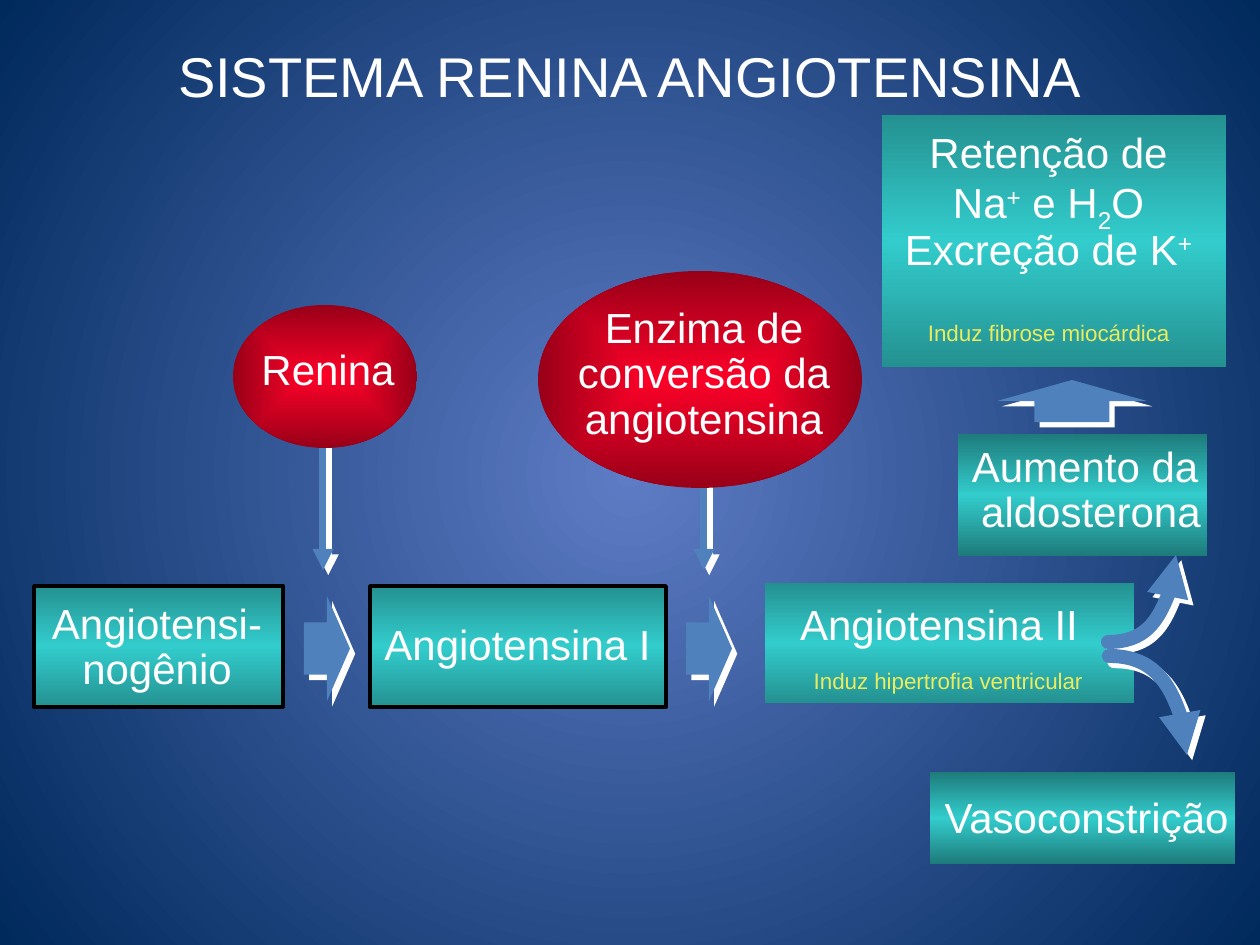
from dataclasses import dataclass
from typing import NamedTuple

from lxml import etree
from pptx import Presentation
from pptx.dml.color import RGBColor
from pptx.enum.shapes import MSO_CONNECTOR, MSO_SHAPE
from pptx.enum.text import MSO_ANCHOR, PP_ALIGN
from pptx.oxml import parse_xml
from pptx.oxml.ns import qn
from pptx.util import Emu, Pt

RECT, OVAL, ARROW = MSO_SHAPE.RECTANGLE, MSO_SHAPE.OVAL, MSO_SHAPE.RIGHT_ARROW
STRAIGHT = MSO_CONNECTOR.STRAIGHT
CENTER, MIDDLE = PP_ALIGN.CENTER, MSO_ANCHOR.MIDDLE

PX_PER_INCH = 126
FONT = "Arial"
COLORS = {
    "glow": "5E7CC5", "night": "00295C", "teal": "33CCCC", "red": "FC0128",
    "arrow": "4F81BD", "white": "FFFFFF", "black": "000000", "note": "EAEC5E",
}
SOFT, DEEP = 46275, 31373  # shade kept at gradient edges, in 1/1000 %
NS = 'xmlns:a="http://schemas.openxmlformats.org/drawingml/2006/main"'
LINEAR = '<a:lin ang="5400000" scaled="1"/>'


class Box(NamedTuple):
    left: int
    top: int
    width: int
    height: int


class Stop(NamedTuple):
    position: int
    color: str
    shade: int = 0


class Run(NamedTuple):
    text: str
    baseline: int = 0


@dataclass
class Panel:
    kind: MSO_SHAPE
    box: Box
    shade: int
    outlined: bool = False


@dataclass
class Line:
    runs: list[Run]
    size: int = 24
    color: str = "white"
    before: int = 0


@dataclass
class Label:
    box: Box
    lines: list[Line]
    wrap: bool = False
    spacing: float = 0.9
    middle: bool = False


@dataclass
class BlockArrow:
    box: Box
    rotation: int = 0


def px(length: int) -> Emu:
    return Emu(round(length * 914400 / PX_PER_INCH))


def rgb(name: str) -> RGBColor:
    return RGBColor.from_string(COLORS[name])


def plain(text: str) -> Line:
    return Line([Run(text)])


def note(text: str, before: int = 0) -> Line:
    """Small yellow remark, set as raised text."""
    return Line([Run(text, 30)], 22, "note", before)


def radial(kind: str) -> str:
    return (f'<a:path path="{kind}"><a:fillToRect l="50000" t="50000" '
            f'r="50000" b="50000"/></a:path>')


def set_gradient(fill, element, stops: list[Stop], direction: str) -> None:
    fill.gradient()
    stop_xml = "".join(
        f'<a:gs pos="{s.position * 1000}"><a:srgbClr val="{COLORS[s.color]}">'
        + (f'<a:shade val="{s.shade}"/>' if s.shade else "")
        + "</a:srgbClr></a:gs>" for s in stops)
    gradient = parse_xml(f'<a:gradFill {NS} rotWithShape="1"><a:gsLst>{stop_xml}'
                         f'</a:gsLst>{direction}</a:gradFill>')
    old = element.find(".//" + qn("a:gradFill"))
    old.getparent().replace(old, gradient)


def cast_shadow(shape) -> None:
    """Hard white shadow; call after fill and line are set."""
    shape.element.spPr.append(parse_xml(
        f'<a:effectLst {NS}><a:outerShdw dist="53882" dir="2700000" '
        f'algn="ctr" rotWithShape="0"><a:srgbClr val="{COLORS["white"]}"/>'
        f'</a:outerShdw></a:effectLst>'))


def style_arrow_line(shape, width: int) -> None:
    shape.line.color.rgb = rgb("arrow")
    shape.line.width = Pt(width)
    outline = shape.element.spPr.find(qn("a:ln"))
    outline.set("cap", "rnd" if width > 4 else "flat")
    etree.SubElement(outline, qn("a:round"))
    etree.SubElement(outline, qn("a:tailEnd"), type="triangle")
    cast_shadow(shape)


def add_panel(shapes, panel: Panel) -> None:
    shape = shapes.add_shape(panel.kind, *map(px, panel.box))
    shape.shadow.inherit = False
    if panel.kind == OVAL:
        stops = [Stop(0, "red"), Stop(100, "red", panel.shade)]
        direction = radial("shape")
    else:
        stops = [Stop(0, "teal", panel.shade), Stop(50, "teal"),
                 Stop(100, "teal", panel.shade)]
        direction = LINEAR
    set_gradient(shape.fill, shape.element, stops, direction)
    if panel.outlined:
        shape.line.color.rgb = rgb("black")
        shape.line.width = Pt(2)
    else:
        shape.line.fill.background()


def add_label(shapes, label: Label) -> None:
    frame = shapes.add_textbox(*map(px, label.box)).text_frame
    frame.word_wrap = label.wrap
    if label.middle:
        frame.vertical_anchor = MIDDLE
    for index, line in enumerate(label.lines):
        paragraph = frame.add_paragraph() if index else frame.paragraphs[0]
        paragraph.alignment = CENTER
        paragraph.line_spacing = label.spacing
        paragraph.space_before = Pt(line.before)
        paragraph.font.name = FONT
        paragraph.font.size = Pt(line.size)
        paragraph.font.color.rgb = rgb(line.color)
        for part in line.runs:
            run = paragraph.add_run()
            run.text = part.text
            if part.baseline:
                run.font._element.set("baseline", str(part.baseline * 1000))


def add_block_arrow(shapes, arrow: BlockArrow) -> None:
    shape = shapes.add_shape(ARROW, *map(px, arrow.box))
    shape.rotation = arrow.rotation
    shape.fill.solid()
    shape.fill.fore_color.rgb = rgb("arrow")
    shape.line.fill.background()
    cast_shadow(shape)


def add_down_arrow(shapes, x: int, top: int, bottom: int) -> None:
    line = shapes.add_connector(STRAIGHT, px(x), px(top), px(x), px(bottom))
    style_arrow_line(line, 4)


def add_curved_arrow(shapes, points: list[tuple[int, int]]) -> None:
    """Arrow along one cubic curve: start, two controls, end."""
    start, *rest = [(px(x), px(y)) for x, y in points]
    builder = shapes.build_freeform(*start)
    builder.add_line_segments(rest, close=False)
    shape = builder.convert_to_shape()
    segments = list(shape.element.iter(qn("a:lnTo")))
    curve = etree.SubElement(segments[0].getparent(), qn("a:cubicBezTo"))
    for segment in segments:
        curve.append(segment[0])
        segment.getparent().remove(segment)
    shape.fill.background()
    style_arrow_line(shape, 8)


PANELS = [
    Panel(OVAL, Box(233, 305, 184, 143), DEEP),
    Panel(RECT, Box(930, 772, 305, 92), DEEP),
    Panel(RECT, Box(882, 115, 344, 252), SOFT),
    Panel(RECT, Box(958, 434, 249, 122), DEEP),
    Panel(OVAL, Box(538, 271, 324, 217), DEEP),
    Panel(RECT, Box(370, 586, 296, 121), SOFT, True),
    Panel(RECT, Box(765, 583, 369, 120), SOFT),
    Panel(RECT, Box(34, 586, 249, 121), SOFT, True),
]
LABELS = [
    Label(Box(887, 126, 323, 207), [
        plain("Retenção de"),
        Line([Run("Na"), Run("+", 30), Run(" e H"), Run("2", -25), Run("O")]),
        Line([Run("Excreção de K"), Run("+", 30)]),
        note("Induz fibrose miocárdica", 26)], True),
    Label(Box(958, 440, 266, 105), [plain("Aumento da "), plain("aldosterona")]),
    Label(Box(786, 598, 306, 58), [plain("Angiotensina II")]),
    Label(Box(913, 791, 347, 58), [plain("Vasoconstrição")], True),
    Label(Box(564, 301, 280, 150), [
        plain("Enzima de"), plain("conversão da"), plain("angiotensina")]),
    Label(Box(248, 343, 160, 58), [plain("Renina")]),
    Label(Box(370, 618, 295, 58), [plain("Angiotensina I")]),
    Label(Box(10, 597, 294, 105), [plain("Angiotensi-"), plain("nogênio")], True),
    Label(Box(752, 662, 392, 52), [note("Induz hipertrofia ventricular")], True),
    Label(Box(63, 0, 1134, 150), [Line([Run("SISTEMA RENINA ANGIOTENSINA")], 32)],
          True, 1.0, True),
]
BLOCK_ARROWS = [BlockArrow(Box(1051, 326, 42, 150), 270),
                BlockArrow(Box(304, 596, 46, 105)),
                BlockArrow(Box(686, 596, 46, 105))]
CURVES = [[(1108, 642), (1145, 642), (1176, 602), (1176, 555)],
          [(1109, 656), (1152, 656), (1187, 701), (1187, 755)]]


def main() -> None:
    deck = Presentation()
    deck.slide_width, deck.slide_height = px(1260), px(945)
    slide = deck.slides.add_slide(deck.slide_layouts[6])
    set_gradient(slide.background.fill, slide.element,
                 [Stop(0, "glow"), Stop(100, "night")], radial("circle"))
    for x in (704, 323):
        add_down_arrow(slide.shapes, x, 430, 570)
    for panel in PANELS:
        add_panel(slide.shapes, panel)
    for label in LABELS:
        add_label(slide.shapes, label)
    for arrow in BLOCK_ARROWS:
        add_block_arrow(slide.shapes, arrow)
    for points in CURVES:
        add_curved_arrow(slide.shapes, points)
    deck.save("out.pptx")


if __name__ == "__main__":
    main()
